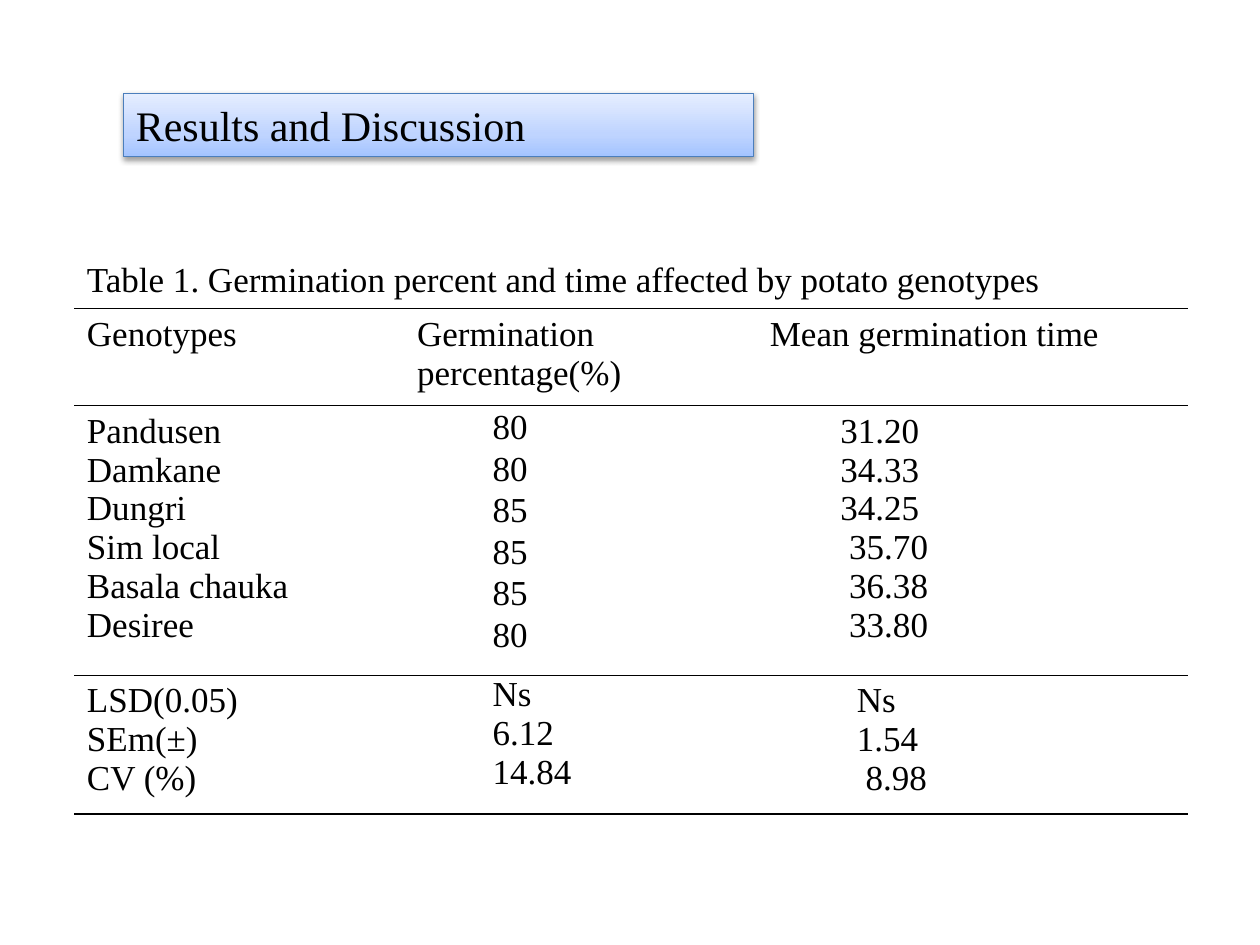
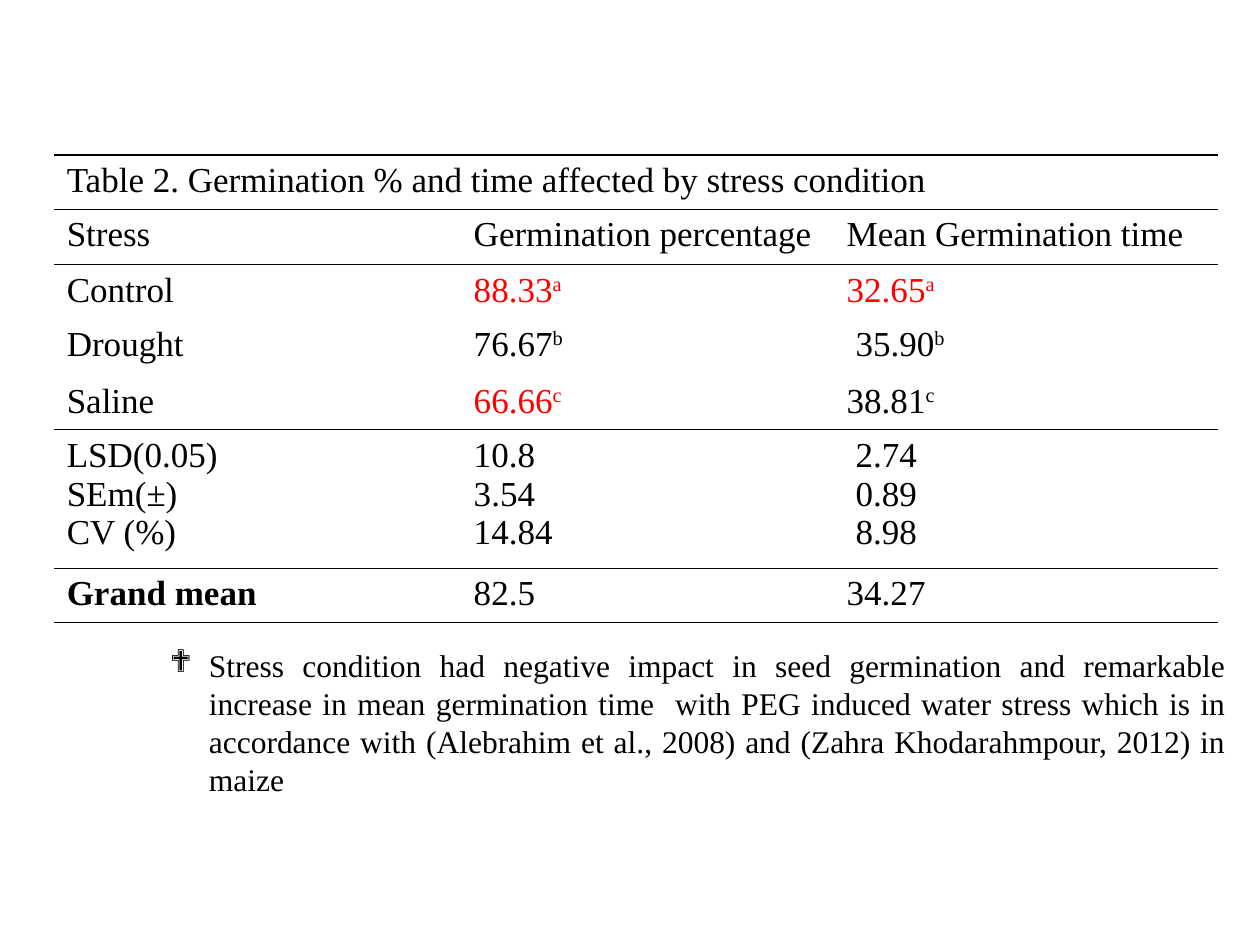
from lxml import etree
from pptx import Presentation
from pptx.dml.color import RGBColor
from pptx.enum.shapes import MSO_SHAPE
from pptx.enum.text import MSO_ANCHOR, PP_ALIGN
from pptx.oxml import parse_xml
from pptx.oxml.ns import qn
from pptx.util import Pt

PX = 9144
FONT = "Times New Roman"
BLACK = RGBColor(0x00, 0x00, 0x00)
RED = RGBColor(0xFF, 0x00, 0x00)
BANNER_EDGE = RGBColor(0x4B, 0x7E, 0xBC)
BANNER_STOPS = [(0, RGBColor(0xA4, 0xC4, 0xFF)), (35, RGBColor(0xBF, 0xD4, 0xFF)),
                (100, RGBColor(0xE6, 0xEE, 0xFF))]
RECTANGLE = MSO_SHAPE.RECTANGLE
LEFT, JUSTIFY = PP_ALIGN.LEFT, PP_ALIGN.JUSTIFY
TOP, MIDDLE = MSO_ANCHOR.TOP, MSO_ANCHOR.MIDDLE
PLAIN_TABLE = "{2D5ABB26-0587-4C30-8999-92F81FD0307C}"
DRAWING_NS = 'xmlns:a="http://schemas.openxmlformats.org/drawingml/2006/main"'
THICK, THIN = Pt(1), Pt(0.75)


def add_run(paragraph, text, size, color=BLACK, bold=False, raised=False):
    run = paragraph.add_run()
    run.text = text
    run.font.name = FONT
    run.font.size = Pt(size)
    run.font.color.rgb = color
    run.font.bold = bold
    if raised:
        run.font._element.set("baseline", "30000")


def add_rule(cell, edge, width):
    cell._tc.get_or_add_tcPr().append(parse_xml(
        f'<a:{edge} {DRAWING_NS} w="{width}"><a:solidFill><a:srgbClr val="{BLACK}"/>'
        f'</a:solidFill><a:prstDash val="solid"/></a:{edge}>'))


prs = Presentation()
prs.slide_width, prs.slide_height = 1000 * PX, 750 * PX
genotype_slide = prs.slides.add_slide(prs.slide_layouts[6])
stress_slide = prs.slides.add_slide(prs.slide_layouts[6])

banner = genotype_slide.shapes.add_shape(RECTANGLE, 98 * PX, 74 * PX, 500 * PX, 50 * PX)
banner.line.color.rgb = BANNER_EDGE
banner.line.width = Pt(0.75)
banner.fill.background()
banner_props = banner._element.spPr
stops = "".join(f'<a:gs pos="{place * 1000}"><a:srgbClr val="{color}"/></a:gs>'
                for place, color in BANNER_STOPS)
banner_props.replace(banner_props.find(qn("a:noFill")), parse_xml(
    f'<a:gradFill {DRAWING_NS} rotWithShape="1"><a:gsLst>{stops}</a:gsLst>'
    '<a:lin ang="16200000" scaled="0"/></a:gradFill>'))
banner_props.append(parse_xml(
    f'<a:effectLst {DRAWING_NS}><a:outerShdw blurRad="40000" dist="20000" dir="5400000" '
    f'rotWithShape="0"><a:srgbClr val="{BLACK}"><a:alpha val="38000"/></a:srgbClr>'
    '</a:outerShdw></a:effectLst>'))
banner.text_frame.word_wrap = True
banner.text_frame.vertical_anchor = MIDDLE
banner_title = banner.text_frame.paragraphs[0]
banner_title.alignment = LEFT
add_run(banner_title, "Results and Discussion", 24)

STATISTICS = ["LSD(0.05)", "SEm(±)", "CV (%)"]
genotype_table = {
    "slide": genotype_slide, "left": 59, "top": 202,
    "columns": [262, 280, 342], "heights": [43, 77, 214, 110],
    "rows": [
        [["Table 1. Germination percent and time affected by potato genotypes"]],
        [["Genotypes"], ["Germination percentage(%)"], ["Mean germination time"]],
        [["Pandusen", "Damkane", "Dungri", "Sim local", "Basala chauka", "Desiree"],
         ["80", "80", "85", "85", "85", "80"],
         ["31.20", "34.33", "34.25", "35.70", "36.38", "33.80"]],
        [STATISTICS, ["Ns", "6.12", "14.84"], ["Ns", "1.54", "8.98"]],
    ],
    "indents": {(2, 1): [63] * 6, (2, 2): [56] * 3 + [63] * 3,
                (3, 1): [63] * 3, (3, 2): [69, 69, 76]},
    "tight": [(2, 1), (3, 1)], "line_spacing": {(2, 1): 1.07},
    "red": [], "bold": [],
    "top_rule": None, "rules": {0: THICK, 1: THIN, 2: THIN, 3: THICK},
}
stress_table = {
    "slide": stress_slide, "left": 43, "top": 123,
    "columns": [323, 296, 305], "heights": [43, 44, 43, 45, 43, 110, 43],
    "rows": [
        [["Table 2. Germination % and time affected by stress condition"]],
        [["Stress"], ["Germination percentage"], ["Mean Germination time"]],
        [["Control"], ["88.33^a"], ["32.65^a"]],
        [["Drought"], ["76.67^b"], ["35.90^b"]],
        [["Saline"], ["66.66^c"], ["38.81^c"]],
        [STATISTICS, ["10.8", "3.54", "14.84"], ["2.74", "0.89", "8.98"]],
        [["Grand mean"], ["82.5"], ["34.27"]],
    ],
    "indents": {(3, 2): [7], (5, 2): [7] * 3},
    "tight": [], "line_spacing": {},
    "red": [(2, 1), (2, 2), (4, 1)], "bold": [(6, 0)],
    "top_rule": THICK, "rules": {0: THIN, 1: THIN, 4: THIN, 5: THIN, 6: THICK},
}

for data in (genotype_table, stress_table):
    columns, heights = data["columns"], data["heights"]
    table = data["slide"].shapes.add_table(
        len(heights), len(columns), data["left"] * PX, data["top"] * PX,
        sum(columns) * PX, sum(heights) * PX).table
    table.first_row = table.horz_banding = False
    table._tbl.tblPr.find(qn("a:tableStyleId")).text = PLAIN_TABLE
    for column, width in zip(table.columns, columns):
        column.width = width * PX
    for row, height in zip(table.rows, heights):
        row.height = height * PX
    table.cell(0, 0).merge(table.cell(0, len(columns) - 1))

    for r, row in enumerate(table.rows):
        for c, cell in enumerate(row.cells):
            if r == 0 and data["top_rule"]:
                add_rule(cell, "lnT", data["top_rule"])
            if r in data["rules"]:
                add_rule(cell, "lnB", data["rules"][r])
            cell.fill.background()

    for r, row_texts in enumerate(data["rows"]):
        for c, lines in enumerate(row_texts):
            place = (r, c)
            cell = table.cell(r, c)
            cell.vertical_anchor = TOP
            if place in data["tight"]:
                cell.margin_left = cell.margin_right = 7 * PX
                cell.margin_top = cell.margin_bottom = 0
            indents = data["indents"].get(place, [0] * len(lines))
            for i, (line, indent) in enumerate(zip(lines, indents)):
                frame = cell.text_frame
                paragraph = frame.add_paragraph() if i else frame.paragraphs[0]
                if indent:
                    paragraph._p.get_or_add_pPr().set("marL", str(indent * PX))
                if place in data["line_spacing"]:
                    paragraph.line_spacing = data["line_spacing"][place]
                color = RED if place in data["red"] else BLACK
                value, _, group = line.partition("^")
                add_run(paragraph, value, 20, color, bold=place in data["bold"])
                if group:
                    add_run(paragraph, group, 20, color, raised=True)

finding = stress_slide.shapes.add_textbox(125 * PX, 508 * PX, 858 * PX, 131 * PX)
finding.text_frame.word_wrap = True
finding_text = finding.text_frame.paragraphs[0]
finding_text.alignment = JUSTIFY
finding_props = finding_text._p.get_or_add_pPr()
finding_props.set("marL", str(31 * PX))
finding_props.set("indent", str(-31 * PX))
etree.SubElement(finding_props, qn("a:buFont"), typeface="Wingdings")
etree.SubElement(finding_props, qn("a:buChar"), char="❖")
add_run(finding_text, "Stress condition had negative impact in seed germination and remarkable "
        "increase in mean germination time  with PEG induced water stress which is in "
        "accordance with (Alebrahim et al., 2008) and (Zahra Khodarahmpour, 2012) in maize", 18)

prs.save("out.pptx")
